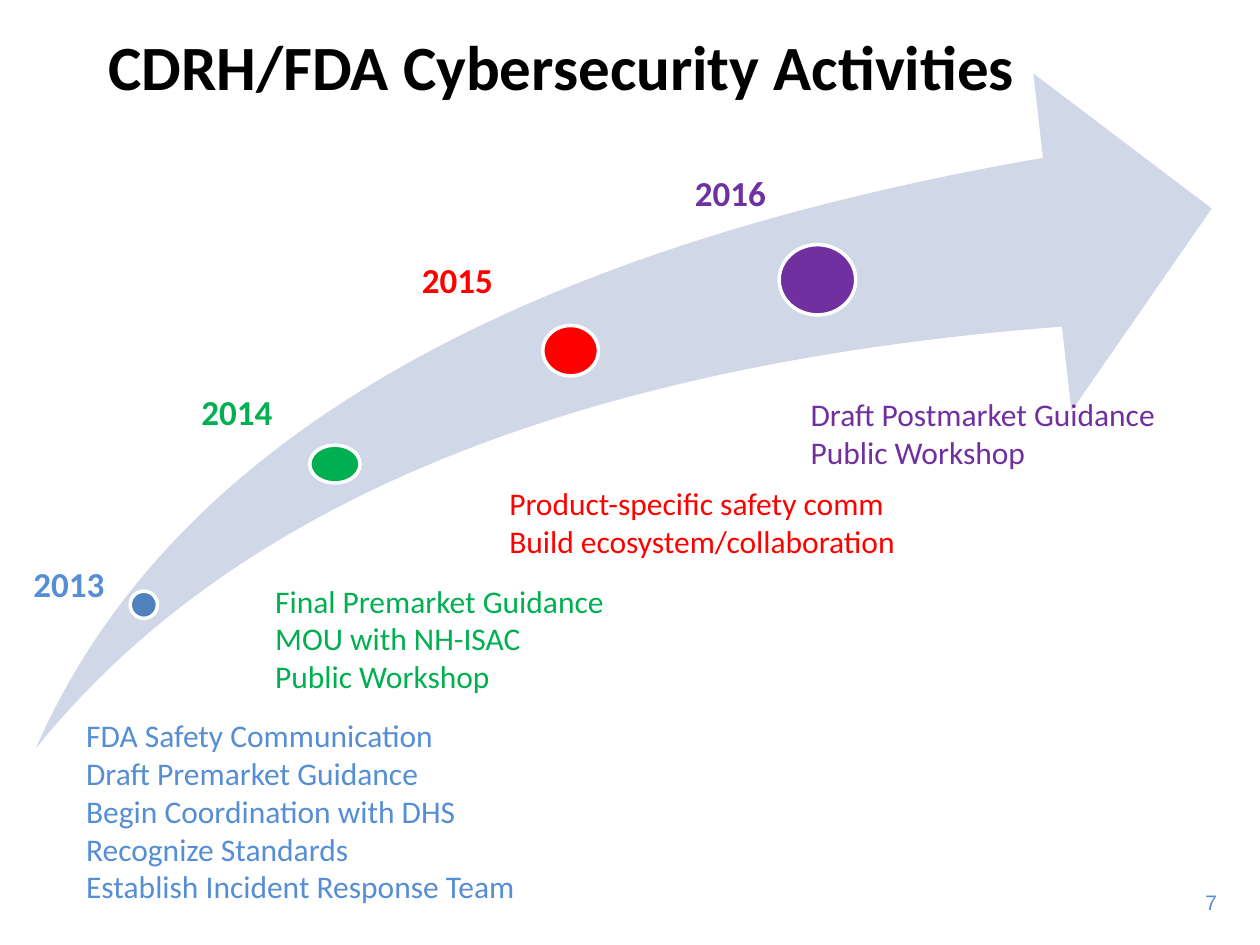
import pptx
import pptx.dml.color
import pptx.enum.shapes
import pptx.enum.text
import pptx.oxml.ns
import pptx.util
from dataclasses import dataclass
from lxml import etree

RGB = pptx.dml.color.RGBColor
SHAPE = pptx.enum.shapes.MSO_SHAPE
ALIGN = pptx.enum.text.PP_ALIGN
ANCHOR = pptx.enum.text.MSO_ANCHOR

BLACK = RGB(0x00, 0x00, 0x00)
WHITE = RGB(0xFF, 0xFF, 0xFF)
PALE = RGB(0xD0, 0xD8, 0xE8)
STEEL = RGB(0x4F, 0x81, 0xBD)
BLUE = RGB(0x55, 0x8E, 0xD5)
GREEN = RGB(0x00, 0xB0, 0x50)
RED = RGB(0xFF, 0x00, 0x00)
PURPLE = RGB(0x70, 0x30, 0xA0)

COLS, ROWS = 120, 90
WIDTH, HEIGHT = pptx.util.Inches(10), pptx.util.Inches(7.5)


@dataclass
class Box:
    col: float
    row: float
    wide: float
    high: float

    def spans(self) -> tuple:
        return (int(self.col * WIDTH / COLS), int(self.row * HEIGHT / ROWS),
                int(self.wide * WIDTH / COLS), int(self.high * HEIGHT / ROWS))


@dataclass
class Year:
    name: str
    ink: RGB
    fill: RGB
    label: tuple
    dot: Box
    list: Box
    items: list


YEARS = [
    Year("2013", BLUE, STEEL, (2, 53), Box(12.4, 56.3, 2.6, 2.6), Box(7, 67.6, 49, 19.4),
         ["FDA Safety Communication", "Draft Premarket Guidance",
          "Begin Coordination with DHS", "Recognize Standards",
          "Establish Incident Response Team"]),
    Year("2014", GREEN, GREEN, (18, 36.6), Box(29.5, 42.4, 4.8, 3.6), Box(25, 54.8, 42.7, 12.1),
         ["Final Premarket Guidance", "MOU with NH-ISAC", "Public Workshop"]),
    Year("2015", RED, RED, (39, 24), Box(51.7, 31, 5.3, 4.8), Box(47.3, 45.5, 42.7, 8.5),
         ["Product-specific safety comm", "Build ecosystem/collaboration"]),
    Year("2016", PURPLE, PURPLE, (65, 15.7), Box(74.2, 23.3, 7.3, 6.7), Box(76, 37, 39, 8.5),
         ["Draft Postmarket Guidance", "Public Workshop"]),
]


def place(shape, box: Box) -> None:
    shape.left, shape.top, shape.width, shape.height = box.spans()


def write(shape, text: str, *, size: float, ink: RGB, bold: bool = False,
          font: str = "Calibri", align=ALIGN.LEFT, wrap: bool = True,
          anchor=ANCHOR.TOP) -> None:
    frame = shape.text_frame
    frame.text = text
    frame.word_wrap = wrap
    frame.auto_size = pptx.enum.text.MSO_AUTO_SIZE.NONE
    frame.vertical_anchor = anchor
    for para in frame.paragraphs:
        props = para._p.get_or_add_pPr()
        props.set("marL", "0")
        props.set("indent", "0")
        etree.SubElement(props, pptx.oxml.ns.qn("a:buNone"))
        para.alignment = align
        para.space_before = pptx.util.Pt(0)
        para.font.size = pptx.util.Pt(size)
        for run in para.runs:
            run.font.name = font
            run.font.size = pptx.util.Pt(size)
            run.font.bold = bold
            run.font.color.rgb = ink


def add_text(slide, box: Box, text: str, **style) -> None:
    write(slide.shapes.add_textbox(*box.spans()), text, **style)


def draw(slide, kind, box: Box, fill: RGB):
    shape = slide.shapes.add_shape(kind, *box.spans())
    shape.shadow.inherit = False
    shape.fill.solid()
    shape.fill.fore_color.rgb = fill
    shape.line.fill.background()
    return shape


def draw_arrow(slide) -> None:
    arrow = draw(slide, SHAPE.SWOOSH_ARROW, Box(3.4, 7, 112, 64.3), PALE)
    arrow.adjustments[0] = 0.25
    arrow.adjustments[1] = 0.25
    tree = arrow._element.getparent()
    tree.insert(2, arrow._element)


def draw_year(slide, year: Year, holder) -> None:
    dot = draw(slide, SHAPE.OVAL, year.dot, year.fill)
    dot.line.color.rgb = WHITE
    dot.line.width = pptx.util.Pt(2)
    add_text(slide, Box(*year.label, 11, 5.3), year.name, size=20, ink=year.ink, bold=True)
    place(holder, year.list)
    write(holder, "\n".join(year.items), size=18, ink=year.ink)


def main() -> None:
    deck = pptx.Presentation()
    deck.slide_width, deck.slide_height = WIDTH, HEIGHT
    slide = deck.slides.add_slide(deck.slide_layouts.get_by_name("Comparison"))
    title, *holders = slide.placeholders
    place(title, Box(2, 2, 103, 8.5))
    write(title, "CDRH/FDA Cybersecurity Activities", size=36, ink=BLACK, bold=True,
          align=ALIGN.CENTER, anchor=ANCHOR.MIDDLE)
    draw_arrow(slide)
    for year, holder in zip(YEARS, holders):
        draw_year(slide, year, holder)
    add_text(slide, Box(112.2, 84.1, 4.9, 3.6), "7", size=12, ink=BLUE,
             font="Arial", align=ALIGN.RIGHT, wrap=False)
    deck.save("out.pptx")


if __name__ == "__main__":
    main()
